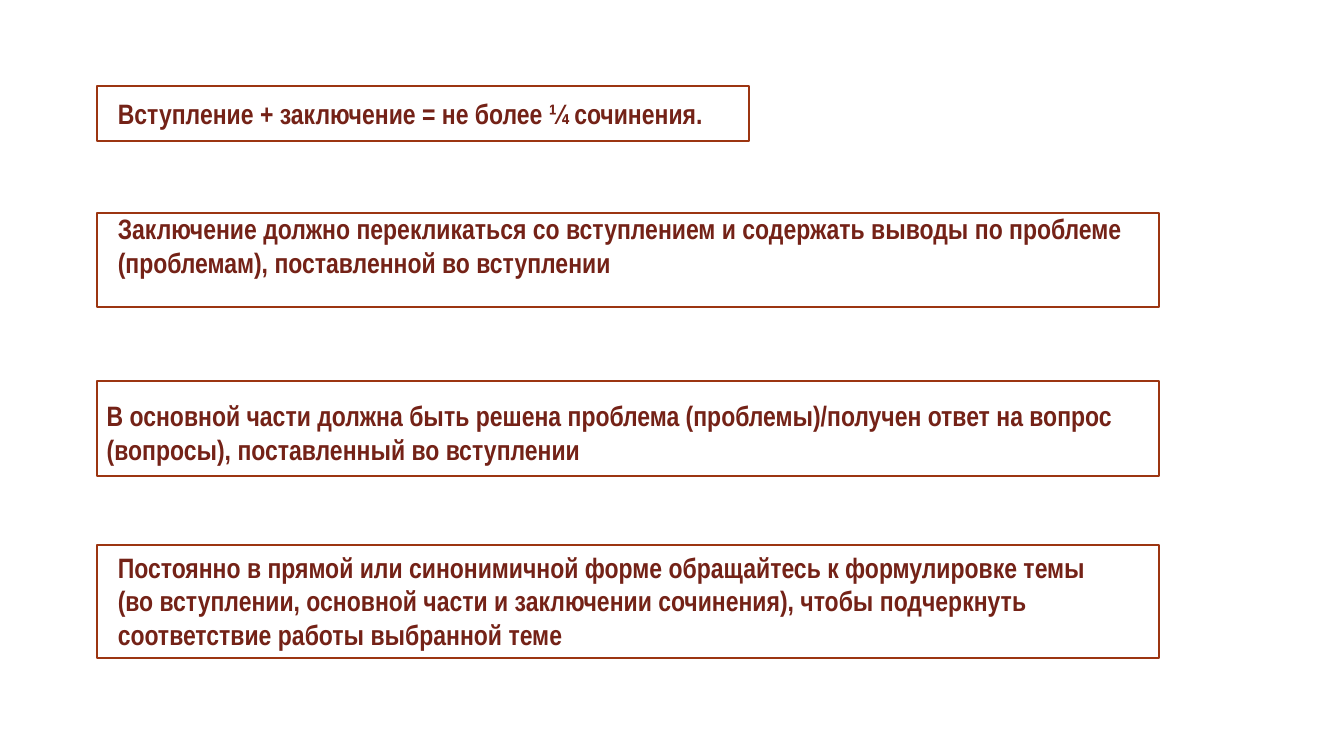
from dataclasses import dataclass

from pptx import Presentation
from pptx.dml.color import RGBColor
from pptx.enum.shapes import MSO_SHAPE
from pptx.enum.text import MSO_ANCHOR, MSO_AUTO_SIZE, PP_ALIGN
from pptx.shapes.autoshape import Shape
from pptx.shapes.shapetree import SlideShapes
from pptx.util import Inches, Pt

RECT = MSO_SHAPE.RECTANGLE
MIDDLE = MSO_ANCHOR.MIDDLE
GROW = MSO_AUTO_SIZE.SHAPE_TO_FIT_TEXT
LEFT = PP_ALIGN.LEFT

RUST = RGBColor(0x9C, 0x35, 0x11)
MAROON = RGBColor(0x74, 0x22, 0x17)

FRAME_X, TEXT_X = 0.96, 1.07
WIDE = 10.54
FONT = {"name": "Arial Narrow", "size": Pt(20), "bold": True}


@dataclass(frozen=True)
class Label:
    """Text box laid over a frame."""
    top: float
    width: float
    height: float


@dataclass(frozen=True)
class Tip:
    """Framed advice; without a label the text sits in the frame itself."""
    top: float
    width: float
    height: float
    lines: tuple[str, ...]
    label: Label | None = None


TIPS = (
    Tip(0.85, 6.47, 0.55,
        ("Вступление + заключение = не более ¼ сочинения.",),
        Label(0.91, 6.47, 0.44)),
    Tip(2.11, WIDE, 0.94,
        ("Заключение должно перекликаться со вступлением и содержать выводы по проблеме",
         "(проблемам), поставленной во вступлении"),
        Label(2.05, 10.33, 0.77)),
    Tip(3.78, WIDE, 0.94,
        ("В основной части должна быть решена проблема (проблемы)/получен ответ на вопрос "
         "(вопросы), поставленный во вступлении",)),
    Tip(5.41, WIDE, 1.12,
        ("Постоянно в прямой или синонимичной форме обращайтесь к формулировке темы",
         "(во вступлении, основной части и заключении сочинения), чтобы подчеркнуть "
         "соответствие работы выбранной теме"),
        Label(5.41, 10.33, 1.12)),
)


def add_frame(shapes: SlideShapes, tip: Tip) -> Shape:
    frame = shapes.add_shape(RECT, Inches(FRAME_X), Inches(tip.top),
                             Inches(tip.width), Inches(tip.height))
    frame.shadow.inherit = False
    frame.fill.background()
    frame.line.color.rgb = RUST
    frame.line.width = Pt(1.5)
    return frame


def add_label(shapes: SlideShapes, label: Label) -> Shape:
    return shapes.add_textbox(Inches(TEXT_X), Inches(label.top),
                              Inches(label.width), Inches(label.height))


def write(shape: Shape, lines: tuple[str, ...], form: dict) -> None:
    body = shape.text_frame
    for name, value in form.items():
        setattr(body, name, value)
    for i, line in enumerate(lines):
        para = body.paragraphs[0] if i == 0 else body.add_paragraph()
        para.alignment = LEFT
        run = para.add_run()
        run.text = line
        for name, value in FONT.items():
            setattr(run.font, name, value)
        run.font.color.rgb = MAROON


def draw(shapes: SlideShapes, tip: Tip) -> None:
    frame = add_frame(shapes, tip)
    if tip.label:
        write(add_label(shapes, tip.label), tip.lines,
              {"word_wrap": True, "auto_size": GROW})
    else:
        write(frame, tip.lines,
              {"word_wrap": True, "vertical_anchor": MIDDLE, "margin_top": Inches(0.13)})


def main() -> None:
    deck = Presentation()
    deck.slide_width, deck.slide_height = Inches(13.33), Inches(7.5)
    slide = deck.slides.add_slide(deck.slide_layouts[6])
    for tip in TIPS:
        draw(slide.shapes, tip)
    deck.save("out.pptx")


if __name__ == "__main__":
    main()
